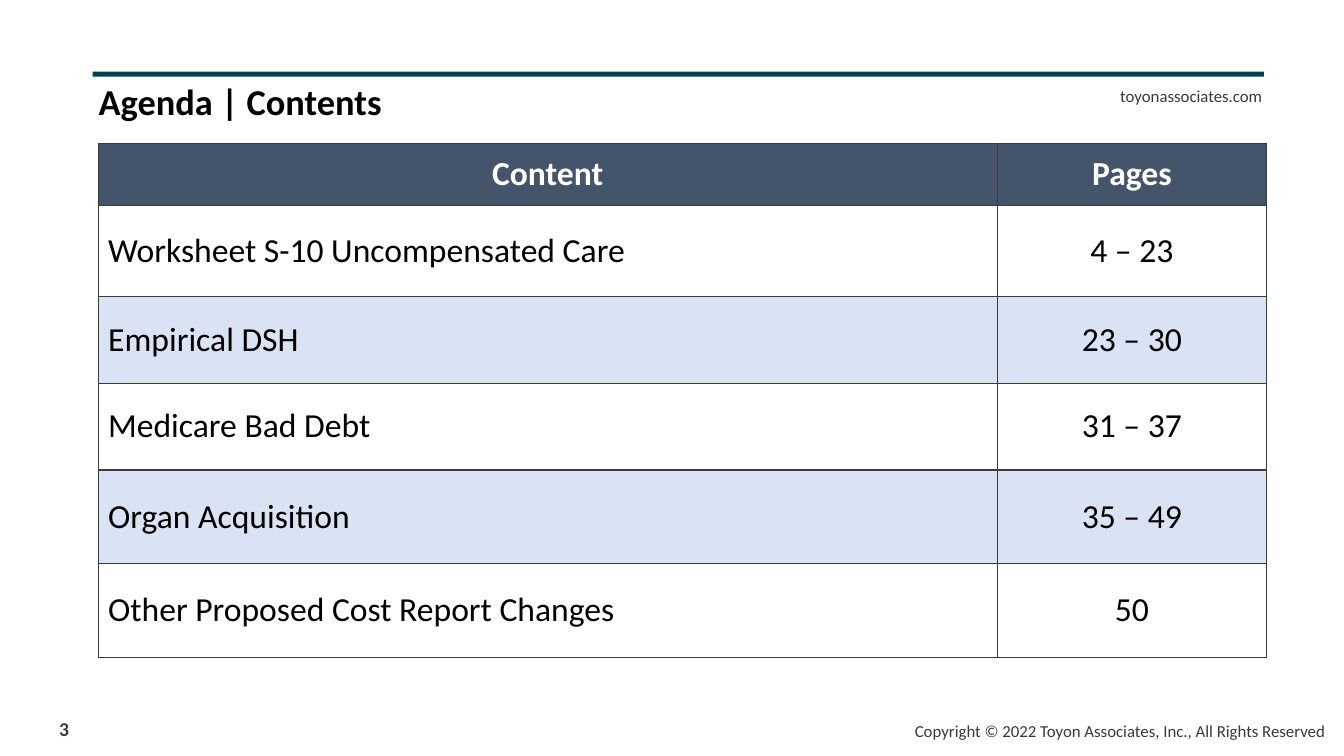
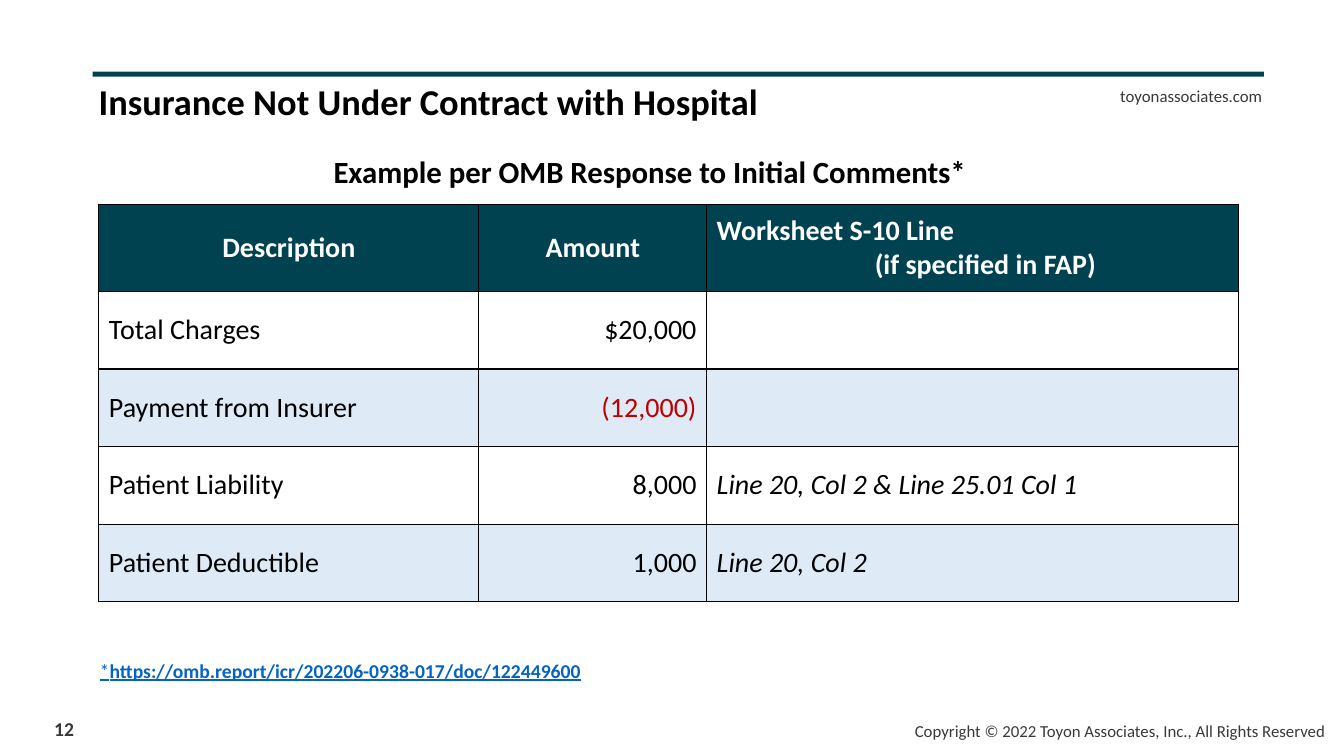
from dataclasses import dataclass, field
from typing import NamedTuple

from lxml import etree
from pptx import Presentation
from pptx import util as u
from pptx.dml.color import RGBColor
from pptx.enum import shapes, text
from pptx.oxml import ns

COLORS = {
    "teal": "004250", "slate": "44546A", "ink": "000000", "white": "FFFFFF",
    "grey": "3B3838", "grid": "3B3B3B", "lavender": "DAE3F3", "sky": "DEEBF7",
    "red": "C00000", "link": "0563C1",
}
FONT = "Calibri"
SLIDE_W, SLIDE_H = u.Inches(13.33), u.Inches(7.5)
L, C, R = text.PP_ALIGN.LEFT, text.PP_ALIGN.CENTER, text.PP_ALIGN.RIGHT
MIDDLE = text.MSO_ANCHOR.MIDDLE


class Box(NamedTuple):
    """Left, top, width and height as percentages of the slide."""
    x: float
    y: float
    w: float
    h: float


class Run(NamedTuple):
    text: str
    fmt: dict = {}


@dataclass
class Para:
    runs: list[Run]
    fmt: dict = field(default_factory=dict)
    indent: float = 0


@dataclass
class Grid:
    """A table: origin, column widths and row heights in slide percentages."""
    x: float
    y: float
    cols: list[float]
    rows: list[float]
    size: int
    aligns: list
    head: str
    band: str
    banded: set[int]
    border: str
    cells: list[list[list[Para]]]


# Text styles
TITLE = {"size": u.Pt(26), "bold": True, "color": "ink"}
SMALL = {"size": u.Pt(12), "color": "grey"}
NUMBER = {"size": u.Pt(14), "bold": True, "color": "grey"}
CAPTION = {"size": u.Pt(22), "bold": True, "color": "ink"}
LINK = {"size": u.Pt(14), "underline": True, "color": "link"}

# Shared places
RULE = Box(6.9, 9.47, 87.15, 0.67)
SITE = Box(73.58, 10.67, 21.08, 4)
PAGE = Box(1.88, 94.13, 5.78, 4.53)
RIGHTS = Box(66.98, 94.67, 32.4, 4)
HEADING = Box(6.6, 10.4, 67.73, 7.07)


def px(share: float) -> int:
    return round(SLIDE_W * share / 100)


def py(share: float) -> int:
    return round(SLIDE_H * share / 100)


def place(b: Box) -> tuple:
    return px(b.x), py(b.y), px(b.w), py(b.h)


def rgb(name: str) -> RGBColor:
    return RGBColor.from_string(COLORS[name])


def write(tf, paras: list[Para], base: dict) -> None:
    for i, para in enumerate(paras):
        p = tf.paragraphs[0] if i == 0 else tf.add_paragraph()
        for key, value in para.fmt.items():
            setattr(p, key, value)
        if para.indent:
            p._p.get_or_add_pPr().set("marL", str(u.Inches(para.indent)))
        for run in para.runs:
            r = p.add_run()
            r.text = run.text
            r.font.name = FONT
            for key, value in {**base, **run.fmt}.items():
                if key == "color":
                    r.font.color.rgb = rgb(value)
                else:
                    setattr(r.font, key, value)


def add_text(s, box: Box, para: Para, base: dict, wrap: bool = True,
             anchor=text.MSO_ANCHOR.TOP) -> None:
    tf = s.shapes.add_textbox(*place(box)).text_frame
    tf.word_wrap = wrap
    tf.vertical_anchor = anchor
    write(tf, [para], base)


def add_borders(cell, color: str) -> None:
    tc_pr = cell._tc.get_or_add_tcPr()
    for side in ("lnL", "lnR", "lnT", "lnB"):
        ln = etree.SubElement(tc_pr, ns.qn(f"a:{side}"), w=str(u.Pt(1)))
        fill = etree.SubElement(ln, ns.qn("a:solidFill"))
        etree.SubElement(fill, ns.qn("a:srgbClr"), val=COLORS[color])


def add_grid(s, g: Grid) -> None:
    box = Box(g.x, g.y, sum(g.cols), sum(g.rows))
    tbl = s.shapes.add_table(len(g.rows), len(g.cols), *place(box)).table
    tbl.first_row = tbl.horz_banding = False
    for col, width in zip(tbl.columns, g.cols):
        col.width = px(width)
    for row, height in zip(tbl.rows, g.rows):
        row.height = py(height)
    for i, row in enumerate(g.cells):
        head = i == 0
        base = {"size": u.Pt(g.size), "bold": head,
                "color": "white" if head else "ink"}
        for j, paras in enumerate(row):
            cell = tbl.cell(i, j)
            cell.vertical_anchor = MIDDLE
            add_borders(cell, g.border)
            if head or i in g.banded:
                cell.fill.solid()
                cell.fill.fore_color.rgb = rgb(g.head if head else g.band)
            else:
                cell.fill.background()
            for para in paras:
                para.fmt.setdefault("alignment", C if head else g.aligns[j])
            write(cell.text_frame, paras, base)


def plain(label: str, **fmt) -> list[Para]:
    return [Para([Run(label, fmt)])] if label else []


def new_slide(prs, title: str, number: int):
    """Blank slide with the rule, title, web address and footer."""
    s = prs.slides.add_slide(prs.slide_layouts[6])
    sp = s.shapes.add_shape(shapes.MSO_SHAPE.RECTANGLE, *place(RULE))
    sp.shadow.inherit = False
    sp.fill.solid()
    sp.fill.fore_color.rgb = rgb("teal")
    sp.line.fill.background()
    for box, label, align, style, wrap in (
        (SITE, "toyonassociates.com", R, SMALL, True),
        (PAGE, str(number), C, NUMBER, True),
        (RIGHTS, "Copyright © 2022 Toyon Associates, Inc., All Rights Reserved",
         R, SMALL, False),
    ):
        add_text(s, box, Para([Run(label)], {"alignment": align}), style,
                 wrap, MIDDLE)
    add_text(s, HEADING, Para([Run(title)], {"line_spacing": 0.9}), TITLE)
    return s


def agenda(prs) -> None:
    s = new_slide(prs, "Agenda | Contents", 3)
    rows = [
        ("Content", "Pages"),
        ("Worksheet S-10 Uncompensated Care", "4 – 23"),
        ("Empirical DSH", "23 – 30"),
        ("Medicare Bad Debt", "31 – 37"),
        ("Organ Acquisition", "35 – 49"),
        ("Other Proposed Cost Report Changes", "50"),
    ]
    add_grid(s, Grid(
        x=7.3, y=18.95, cols=[66.9, 20.03],
        rows=[8.27, 12, 11.47, 11.47, 12.4, 12.4], size=24, aligns=[L, C],
        head="slate", band="lavender", banded={2, 4}, border="grid",
        cells=[[plain(label) for label in row] for row in rows]))


def insurance(prs) -> None:
    s = new_slide(prs, "Insurance Not Under Contract with Hospital", 12)
    line_head = [Para([Run("Worksheet S-10 Line")], {"alignment": L}),
                 Para([Run("(if specified in FAP)")], indent=0.25)]
    rows = [
        ("Total Charges", "$20,000", ""),
        ("Payment from Insurer", "(12,000)", ""),
        ("Patient Liability", "8,000", "Line 20, Col 2 & Line 25.01 Col 1"),
        ("Patient Deductible", "1,000", "Line 20, Col 2"),
    ]
    cells = [[plain("Description"), plain("Amount"), line_head]]
    for item, amount, line in rows:
        color = "red" if amount.startswith("(") else "ink"
        cells.append([plain(item), plain(amount, color=color),
                      plain(line, italic=True)])
    add_grid(s, Grid(
        x=7.35, y=27.07, cols=[28.28, 16.95, 39.6],
        rows=[11.47] + [10.27] * len(rows), size=20, aligns=[L, R, L],
        head="teal", band="sky", banded={2, 4}, border="ink", cells=cells))
    # Table caption and source
    add_text(s, Box(18.23, 19.6, 60.23, 6.27),
             Para([Run("Example per OMB Response to Initial Comments*")],
                  {"alignment": C}), CAPTION)
    address = "https://omb.report/icr/202206-0938-017/doc/122449600"
    add_text(s, Box(2.93, 86.13, 63.9, 4.67),
             Para([Run("*"), Run(address, {"bold": True})],
                  {"line_spacing": 1.1, "space_after": u.Pt(10)}, indent=0.5),
             LINK)


def main() -> None:
    prs = Presentation()
    prs.slide_width, prs.slide_height = SLIDE_W, SLIDE_H
    agenda(prs)
    insurance(prs)
    prs.save("out.pptx")


if __name__ == "__main__":
    main()
